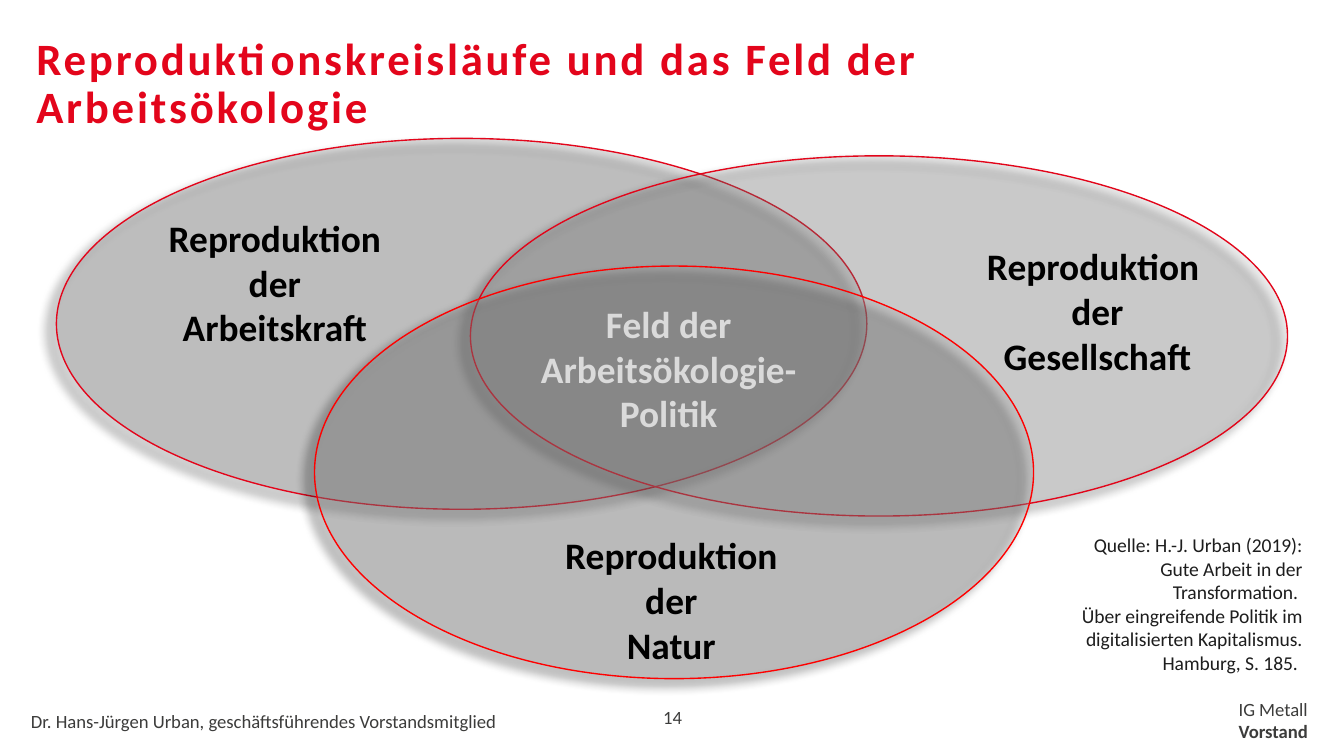
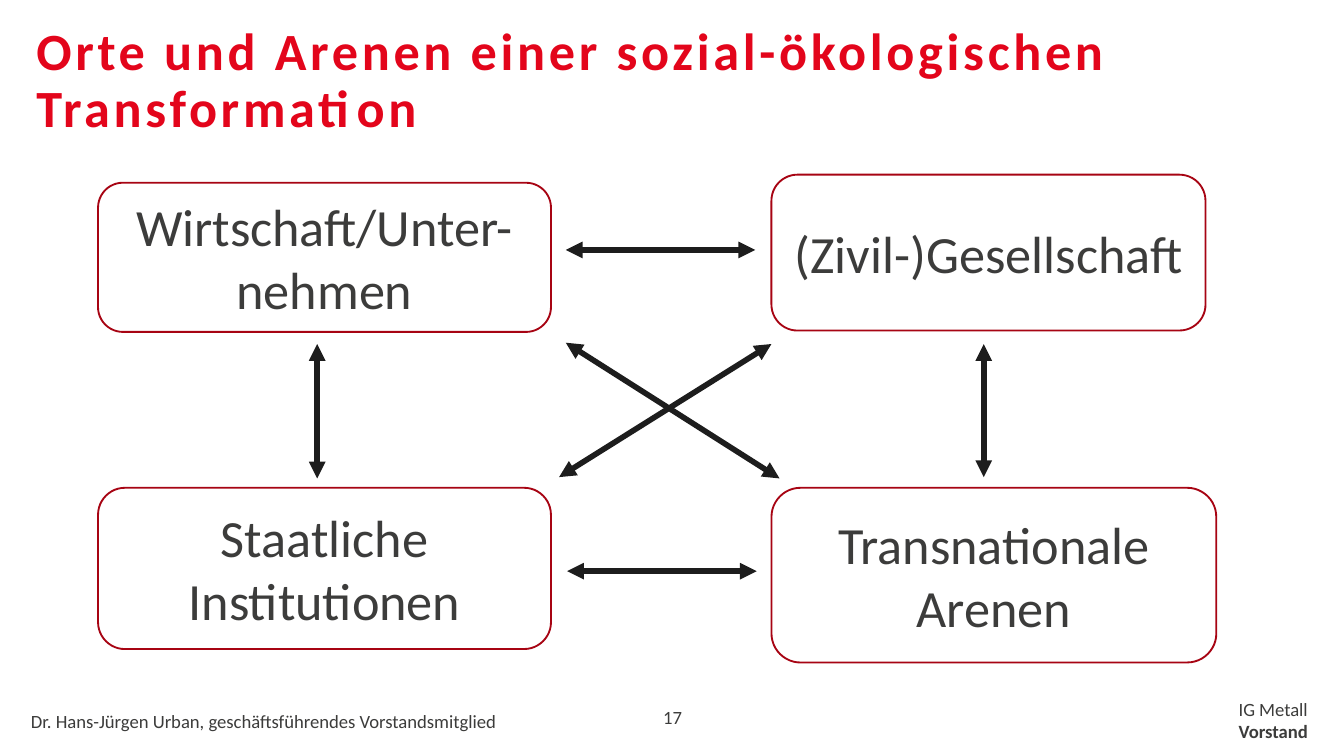
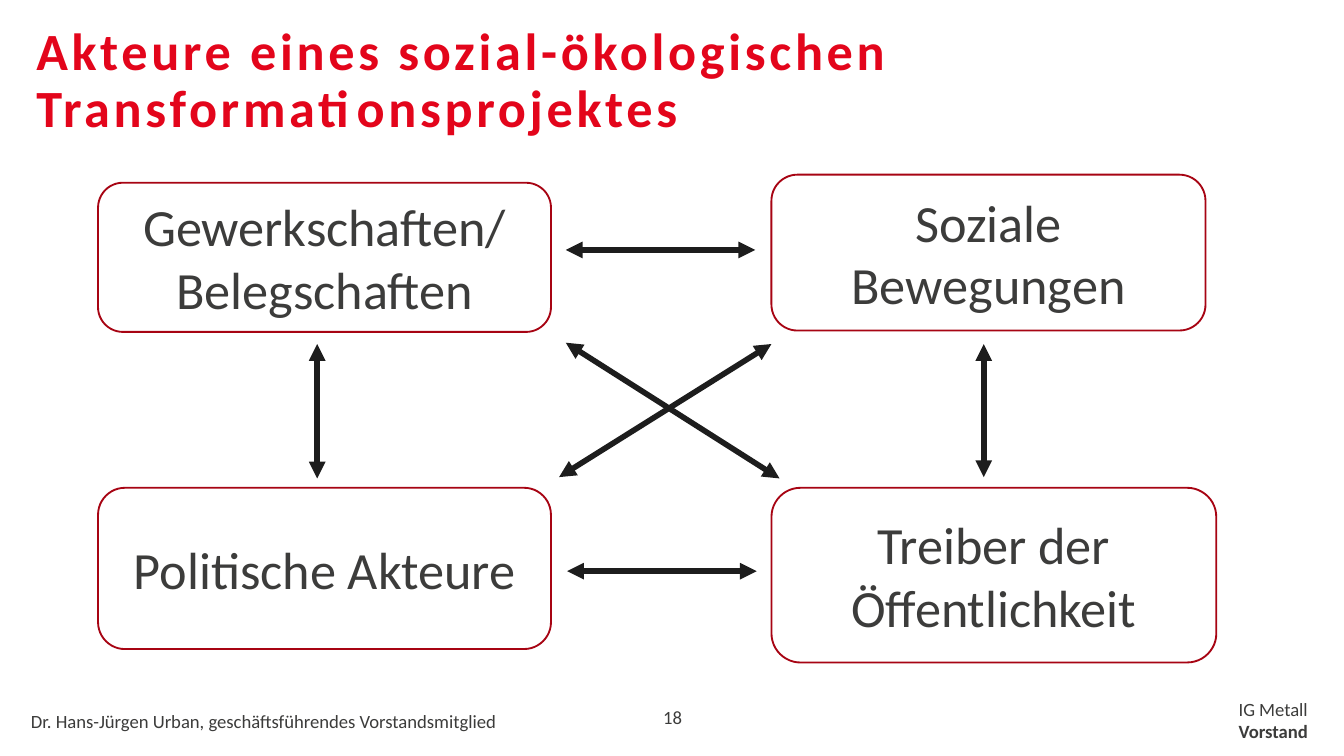
"""Three slides on work ecology: overlapping reproduction cycles, then two four-cornered arrow diagrams."""
from pptx import Presentation
from pptx import util as u
from pptx.dml.color import RGBColor
from pptx.enum import shapes, text
from pptx.oxml import parse_xml
from pptx.oxml.ns import nsdecls
from pptx.util import Inches

RED = RGBColor(0xE3, 0x05, 0x1B)
CRIMSON = RGBColor(0xE2, 0x05, 0x1A)
BRIGHT_RED = RGBColor(0xFF, 0x00, 0x00)
DARK_RED = RGBColor(0xA7, 0x04, 0x13)
BLACK = RGBColor(0x00, 0x00, 0x00)
INK = RGBColor(0x1D, 0x1D, 0x1D)
CHARCOAL = RGBColor(0x3C, 0x3C, 0x3B)
GREY = RGBColor(0x80, 0x80, 0x80)
MID_GREY = RGBColor(0xA6, 0xA6, 0xA6)
PALE_GREY = RGBColor(0xDA, 0xDA, 0xDA)
FONT = "Calibri"
LEFT, CENTER, RIGHT = text.PP_ALIGN.LEFT, text.PP_ALIGN.CENTER, text.PP_ALIGN.RIGHT
TOP, MIDDLE, BOTTOM = text.MSO_ANCHOR.TOP, text.MSO_ANCHOR.MIDDLE, text.MSO_ANCHOR.BOTTOM


def write(frame, words, size, color, align=LEFT, bold=False, anchor=TOP):
    frame.word_wrap = True
    frame.vertical_anchor = anchor
    frame.text = words
    for paragraph in frame.paragraphs:
        paragraph.alignment = align
        paragraph.font.name = FONT
        paragraph.font.size = u.Pt(size)
        paragraph.font.bold = bold
        paragraph.font.color.rgb = color
    return frame


def add_text(slide, box, words, size, color, align=LEFT, bold=False, anchor=TOP, inset=True):
    frame = slide.shapes.add_textbox(*map(Inches, box)).text_frame
    if not inset:
        frame.margin_left = frame.margin_right = frame.margin_top = frame.margin_bottom = 0
    return write(frame, words, size, color, align, bold, anchor)


prs = Presentation()
prs.slide_width = Inches(10)
prs.slide_height = prs.slide_width * 9 // 16

pages = [
    ("14", "Reproduktionskreisläufe und das Feld der Arbeitsökologie", (0.27, 0.27, 8.65, 0.52), 24, 150),
    ("17", "Orte und Arenen einer sozial-ökologischen Transformation", (0.27, 0.19, 8.39, 0.52), 28, 200),
    ("18", "Akteure eines sozial-ökologischen Transformationsprojektes", (0.27, 0.19, 8.39, 0.52), 28, 200),
]
for number, headline, box, size, tracking in pages:
    slide = prs.slides.add_slide(prs.slide_layouts[6])
    add_text(slide, (0.23, 5.28, 4.09, 0.17), "Dr. Hans-Jürgen Urban, geschäftsführendes Vorstandsmitglied",
             10, CHARCOAL, anchor=BOTTOM, inset=False)
    sender = add_text(slide, (6.69, 5.19, 3.04, 0.34), "IG Metall\nVorstand", 10, CHARCOAL, RIGHT, inset=False)
    sender.paragraphs[1].font.bold = True
    page_number = add_text(slide, (4.52, 5.12, 0.97, 0.3), number, 10, CHARCOAL, CENTER, anchor=BOTTOM, inset=False)
    page_number.paragraphs[0].line_spacing = 0.9
    title = add_text(slide, box, headline, size, RED, bold=True, inset=False).paragraphs[0]
    title.line_spacing = 0.9
    title.runs[0]._r.get_or_add_rPr().set("spc", str(tracking))

cycles, *arenas = prs.slides

for box, color, opacity, outline in [
    ((0.42, 1.03, 6.03, 2.76), GREY, 24, RED),
    ((3.5, 1.16, 6.08, 2.68), MID_GREY, 23, CRIMSON),
    ((2.34, 1.98, 5.35, 3.07), MID_GREY, 31, BRIGHT_RED),
]:
    cycle = cycles.shapes.add_shape(shapes.MSO_SHAPE.OVAL, *map(Inches, box))
    cycle.fill.solid()
    cycle.fill.fore_color.rgb = color
    tint = cycle._element.spPr.find(".//{*}solidFill/{*}srgbClr")
    tint.append(parse_xml(f'<a:alpha {nsdecls("a")} val="{opacity * 1000}"/>'))
    cycle.line.color.rgb = outline
    cycle.line.width = u.Pt(0.75)
    cycle.shadow.inherit = False
    cycle._element.spPr.find("{*}effectLst").append(parse_xml(
        f'<a:outerShdw {nsdecls("a")} blurRad="{u.Pt(5)}" dist="{u.Pt(6)}" dir="{140 * 60000}" rotWithShape="0">'
        f'<a:srgbClr val="{BLACK}"><a:alpha val="75000"/></a:srgbClr></a:outerShdw>'))

for box, words, color in [
    ((3.72, 2.19, 2.51, 1.11), "Feld der Arbeitsökologie-Politik", PALE_GREY),
    ((3.79, 3.91, 2.41, 1.11), "Reproduktion\nder\nNatur", BLACK),
    ((0.89, 1.55, 2.31, 1.11), "Reproduktion\nder\nArbeitskraft", BLACK),
    ((6.92, 1.76, 2.49, 1.11), "Reproduktion \nder\nGesellschaft", BLACK),
]:
    add_text(cycles, box, words, 20, color, CENTER, bold=True)

add_text(cycles, (7.79, 3.92, 2, 1.16),
         "Quelle: H.-J. Urban (2019): Gute Arbeit in der Transformation. \v"
         "Über eingreifende Politik im digitalisierten Kapitalismus. Hamburg, S. 185. ", 10.5, INK, RIGHT)

corners = [(0.73, 1.36, 3.37, 1.11), (5.74, 1.3, 3.23, 1.16), (0.73, 3.63, 3.37, 1.2), (5.74, 3.63, 3.31, 1.3)]
links = [
    (4.21, 1.86, 5.62, 1.86), (4.16, 3.55, 5.74, 2.56), (7.32, 2.56, 7.32, 3.55),
    (4.22, 4.25, 5.63, 4.25), (2.36, 2.56, 2.36, 3.56), (4.21, 2.55, 5.8, 3.56),
]
fields = [
    ("Wirtschaft/Unter-nehmen", "(Zivil-)Gesellschaft", "Staatliche Institutionen", "Transnationale Arenen"),
    ("Gewerkschaften/ Belegschaften", "Soziale Bewegungen", "Politische Akteure", "Treiber der Öffentlichkeit"),
]
for slide, names in zip(arenas, fields):
    for box, name in zip(corners, names):
        field = slide.shapes.add_shape(shapes.MSO_SHAPE.ROUNDED_RECTANGLE, *map(Inches, box))
        field.fill.background()
        field.line.color.rgb = DARK_RED
        field.line.width = u.Pt(1)
        field.shadow.inherit = False
        write(field.text_frame, name, 28, CHARCOAL, CENTER, anchor=MIDDLE)
    for ends in links:
        link = slide.shapes.add_connector(shapes.MSO_CONNECTOR.STRAIGHT, *map(Inches, ends))
        link.line.color.rgb = INK
        link.line.width = u.Pt(3)
        for end in ("headEnd", "tailEnd"):
            link.line._ln.append(parse_xml(f'<a:{end} {nsdecls("a")} type="triangle"/>'))
        link._element.spPr.append(parse_xml(f'<a:effectLst {nsdecls("a")}/>'))

prs.save("out.pptx")
